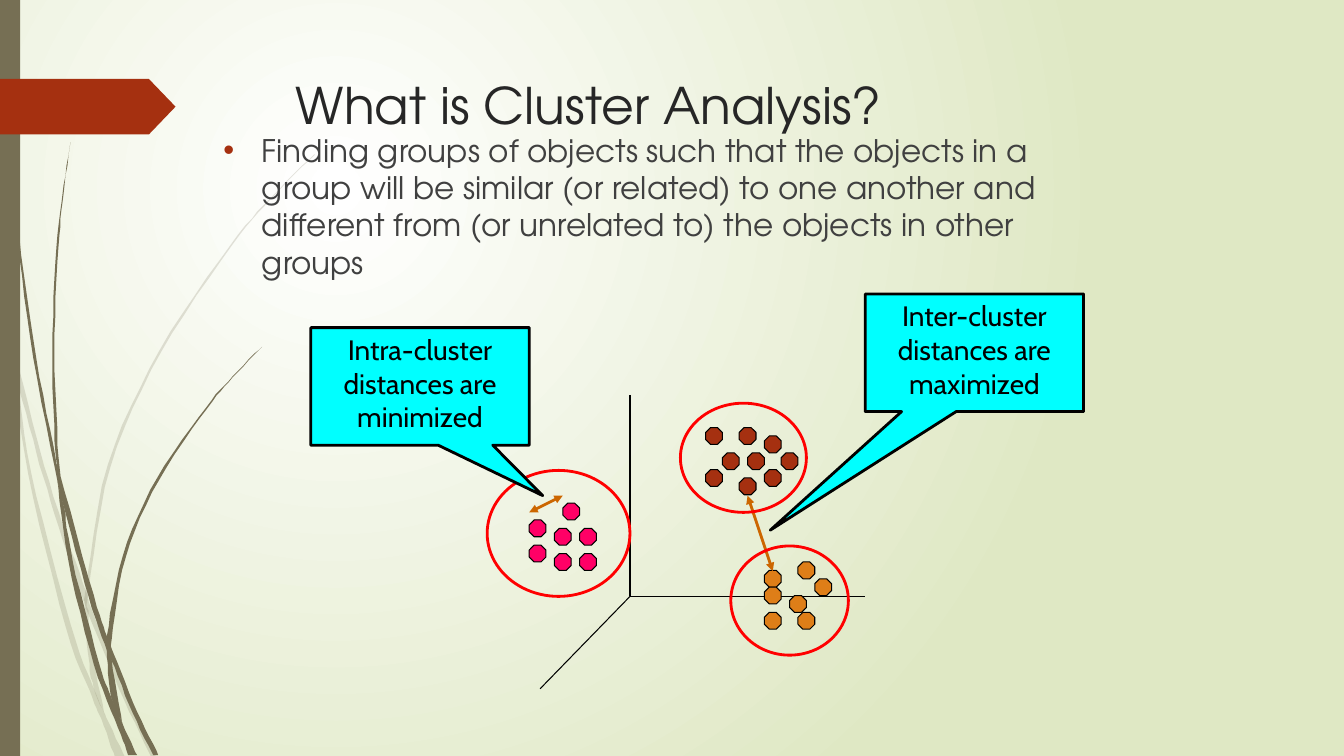
import lxml.etree
import pptx
import pptx.dml.color
import pptx.enum.shapes
import pptx.enum.text
import pptx.oxml
import pptx.oxml.ns
import pptx.util

KIND = pptx.enum.shapes.MSO_SHAPE
ALIGN = pptx.enum.text.PP_ALIGN
HEX = {
    "white": "FFFFFF", "sage": "DFE8C4", "olive": "766F54", "rust": "A53010",
    "head": "262626", "body": "404040", "black": "000000", "pink": "FF0066",
    "amber": "DE7E18", "arrow": "CC6600", "cyan": "00FFFF", "red": "FF0000",
}
COLS, ROWS = 160, 90
SANS = "TeX Gyre Adventor"
FRAME = {
    "word_wrap": True,
    "auto_size": pptx.enum.text.MSO_AUTO_SIZE.NONE,
    "vertical_anchor": pptx.enum.text.MSO_ANCHOR.TOP,
}

PALE = [
    ([(0, 299), (10, 344), (17, 376), (36, 449), (58, 522), (84, 599),
      (88, 610), (123, 694), (150, 751)],
     [(155, 751), (127, 692), (92, 607), (85, 586), (62, 520), (36, 433),
      (14, 345), (9, 322), (0, 282)]),
    ([(11, 350), (28, 470), (65, 621), (92, 693), (101, 714), (114, 751)],
     [(124, 751), (105, 711), (93, 683), (70, 619), (31, 469), (17, 376)]),
    ([(312, 153), (268, 197), (228, 244), (158, 348), (107, 461), (85, 584),
      (84, 599), (87, 646), (93, 683), (105, 711)],
     [(103, 706), (91, 646), (88, 610), (88, 584), (110, 462), (160, 349),
      (229, 245), (268, 198), (312, 154)]),
]
DARK = [
    ([(3, 0), (7, 110), (17, 233), (33, 355), (57, 477), (64, 505), (88, 592),
      (106, 645), (111, 656), (132, 708), (152, 749)],
     [(157, 749), (136, 706), (113, 649), (106, 631), (93, 590), (60, 472),
      (55, 453), (36, 355), (19, 232), (8, 109), (4, 0)]),
    ([(57, 477), (68, 557), (93, 659), (117, 722), (127, 749)],
     [(136, 749), (122, 719), (110, 691), (98, 657), (72, 556), (64, 505)]),
    ([(70, 141), (62, 193), (56, 245), (52, 349), (55, 449), (60, 472)],
     [(58, 453), (54, 349), (58, 245), (63, 193), (70, 141)]),
    ([(260, 344), (231, 373), (204, 405), (156, 474), (122, 551), (106, 631),
      (106, 645), (110, 691), (122, 719)],
     [(121, 716), (111, 656), (111, 633), (125, 552), (158, 476), (205, 406),
      (231, 374), (260, 344)]),
]
DOTS = {
    "rust": [(86, 54), (89, 54), (88, 51), (88, 57), (93, 54), (91, 52),
             (84, 51), (91, 56), (84, 56)],
    "pink": [(63, 62), (66, 63), (66, 66), (69, 63), (67, 60), (69, 66),
             (63, 65)],
    "amber": [(91, 68), (97, 69), (94, 71), (91, 73), (95, 73), (91, 70),
              (95, 67)],
}
RINGS = [(58, 56, 17, 15), (81, 48, 15, 13), (87, 65, 14, 13)]
AXES = [(75, 47, 75, 71), (75, 71, 103, 71), (75, 71, 64.3, 82)]


def grid(*nums):
    return [pptx.util.Inches(num / 12) for num in nums]


def tint(name):
    return pptx.dml.color.RGBColor.from_string(HEX[name])


def put(item, vals):
    for key, val in vals.items():
        setattr(item, key, val)


def node(root, tag, **vals):
    return lxml.etree.SubElement(root, pptx.oxml.ns.qn(tag), vals)


def paint(shape, fill, line=None, width=0.75):
    shape.shadow.inherit = False
    if fill:
        shape.fill.solid()
        shape.fill.fore_color.rgb = tint(fill)
    else:
        shape.fill.background()
    if line:
        put(shape.line, {"width": pptx.util.Pt(width)})
        shape.line.color.rgb = tint(line)
    else:
        shape.line.fill.background()


def block(slide, kind, box, fill, line=None, width=0.75, adj=()):
    shape = slide.shapes.add_shape(kind, *grid(*box))
    paint(shape, fill, line, width)
    for num, val in enumerate(adj):
        shape.adjustments[num] = val
    return shape


def write(shape, text, size, font, color, align):
    frame = shape.text_frame
    put(frame, FRAME)
    frame.text = text
    para = frame.paragraphs[0]
    para.alignment = align
    style = para.runs[0].font
    put(style, {"size": pptx.util.Pt(size), "name": font})
    style.color.rgb = tint(color)
    return para


def hold(shape, box, *words):
    put(shape, dict(zip(("left", "top", "width", "height"), grid(*box))))
    shape.element.getparent().append(shape.element)
    return write(shape, *words, ALIGN.LEFT)


def smooth(dots, steps=6):
    ends = [dots[0], *dots, dots[-1]]
    curve = []
    for a, b, c, d in zip(ends, ends[1:], ends[2:], ends[3:]):
        for step in range(steps):
            t = step / steps
            curve.append(tuple(
                q + t * (r - p) / 2 + t * t * (2 * p - 5 * q + 4 * r - s) / 2
                + t ** 3 * (3 * q - p - 3 * r + s) / 2
                for p, q, r, s in zip(a, b, c, d)))
    return curve + [dots[-1]]


def wisp(slide, sides, alpha=None):
    dots = smooth(sides[0]) + smooth(sides[1])
    form = slide.shapes.build_freeform(*dots[0], scale=9144)
    form.add_line_segments(dots[1:], close=True)
    shape = form.convert_to_shape()
    paint(shape, "olive")
    if alpha:
        color = shape.element.spPr.find(".//" + pptx.oxml.ns.qn("a:srgbClr"))
        node(color, "a:alpha", val=alpha)


def rule(slide, ends, color, width, heads=False):
    line = slide.shapes.add_connector(
        pptx.enum.shapes.MSO_CONNECTOR.STRAIGHT, *grid(*ends))
    line.line.width = pptx.util.Pt(width)
    line.line.color.rgb = tint(color)
    if heads:
        for tag in ("a:headEnd", "a:tailEnd"):
            node(line.line._get_or_add_ln(), tag, type="triangle")
    node(line.element.spPr, "a:effectLst")


def note(slide, box, adj, text):
    shape = block(slide, KIND.RECTANGULAR_CALLOUT, box, "cyan", "black", 2, adj)
    write(shape, text, 20, "Cabin", "black", ALIGN.CENTER)


def wash(slide):
    fill = slide.background.fill
    fill.gradient()
    for stop, name in zip(fill.gradient_stops, ("white", "sage")):
        stop.color.rgb = tint(name)
    lin = slide.element.find(".//" + pptx.oxml.ns.qn("a:lin"))
    root = lin.getparent()
    root.remove(lin)
    node(node(root, "a:path", path="circle"), "a:fillToRect",
         l="50000", t="50000", r="100000", b="100000")


def bullet(para):
    para.space_before = pptx.util.Pt(10)
    props = para._p.get_or_add_pPr()
    gap = pptx.util.Inches(0.38)
    props.set("marL", str(gap))
    props.set("indent", str(-gap))
    node(node(props, "a:buClr"), "a:srgbClr", val=HEX["rust"])
    node(props, "a:buFont", typeface="Arial")
    node(props, "a:buChar", char="•")


def main():
    deck = pptx.Presentation()
    wide, high = grid(COLS, ROWS)
    put(deck, {"slide_width": wide, "slide_height": high})
    slide = deck.slides.add_slide(deck.slide_layouts[1])
    wash(slide)
    for sides in PALE:
        wisp(slide, sides, "20000")
    for sides in DARK:
        wisp(slide, sides)
    block(slide, KIND.RECTANGLE, (0, 0, 2.4, ROWS), "olive")
    block(slide, KIND.PENTAGON, (0, 9.4, 20.9, 6.6), "rust", adj=[0.48])
    title, body = slide.placeholders
    hold(title, (34, 8.2, 117, 16.8), "What is Cluster Analysis?",
         36, SANS, "head")
    bullet(hold(
        body, (25.4, 15, 109.2, 17),
        "Finding groups of objects such that the objects in a group will be "
        "similar (or related) to one another and different from (or unrelated "
        "to) the objects in other groups", 22.2, SANS, "body"))
    for ends in AXES:
        rule(slide, ends, "black", 0.75)
    for color, spots in DOTS.items():
        for col, row in spots:
            block(slide, KIND.OCTAGON, (col, row - 0.1, 2, 2), color, "black")
    rule(slide, (92, 68, 89, 59), "arrow", 2, True)
    note(slide, (103, 35, 26, 14), (-0.935, 1.509),
         "Inter-cluster distances are maximized")
    for box in RINGS:
        block(slide, KIND.OVAL, box, None, "red", 2)
    rule(slide, (63, 61, 67, 59), "arrow", 2, True)
    note(slide, (37, 39, 26, 14), (0.562, 0.929),
         "Intra-cluster distances are minimized")


    deck.save("out.pptx")


if __name__ == "__main__":
    main()
